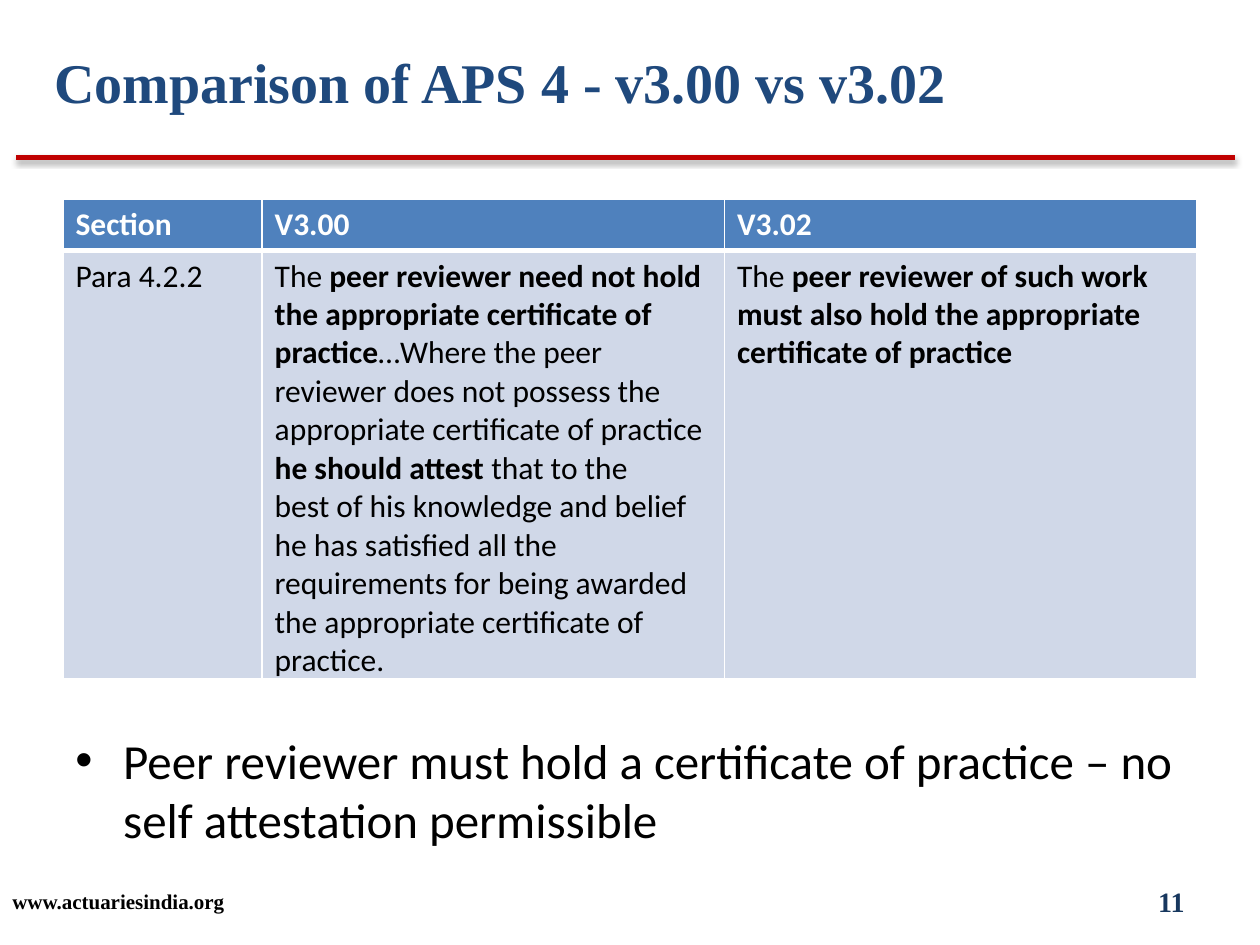
import lxml.etree
import pptx
import pptx.dml.color
import pptx.enum.shapes
import pptx.enum.text
import pptx.oxml
import pptx.oxml.ns
import pptx.util

Inches, Pt = pptx.util.Inches, pptx.util.Pt
RGBColor = pptx.dml.color.RGBColor
ANCHOR, ALIGN = pptx.enum.text.MSO_ANCHOR, pptx.enum.text.PP_ALIGN
qn = pptx.oxml.ns.qn
A_NS = 'xmlns:a="http://schemas.openxmlformats.org/drawingml/2006/main"'

RED = RGBColor(0xC0, 0x00, 0x00)
BLACK = RGBColor(0x00, 0x00, 0x00)
WHITE = RGBColor(0xFF, 0xFF, 0xFF)
TITLE_BLUE = RGBColor(0x1F, 0x49, 0x7D)
NUMBER_BLUE = RGBColor(0x17, 0x37, 0x5E)
HEADER_BLUE = RGBColor(0x4F, 0x81, 0xBD)
BODY_BLUE = RGBColor(0xD0, 0xD8, 0xE8)


def add_run(paragraph, text, name, size, color, bold):
    run = paragraph.add_run()
    run.text = text
    run.font.color.rgb = color
    for attribute, value in {"name": name, "size": Pt(size), "bold": bold}.items():
        setattr(run.font, attribute, value)


def add_box(left, top, width, height, anchor):
    box = slide.shapes.add_textbox(Inches(left), Inches(top), Inches(width), Inches(height))
    box.text_frame.word_wrap = True
    box.text_frame.vertical_anchor = anchor
    return box.text_frame.paragraphs[0]


presentation = pptx.Presentation()
presentation.slide_width, presentation.slide_height = Inches(10), Inches(7.5)
slide = presentation.slides.add_slide(presentation.slide_layouts[5])

# Red rule with a soft shadow below it
rule = slide.shapes.add_connector(
    pptx.enum.shapes.MSO_CONNECTOR.STRAIGHT,
    Inches(0.13), Inches(1.25), Inches(9.8), Inches(1.25))
rule.line.color.rgb = RED
rule.line.width = Pt(3)
rule._element.spPr.append(pptx.oxml.parse_xml(
    f'<a:effectLst {A_NS}><a:outerShdw blurRad="{Pt(3.1)}" dist="{Pt(1.6)}" dir="5400000" '
    'rotWithShape="0"><a:srgbClr val="000000"><a:alpha val="38000"/></a:srgbClr>'
    '</a:outerShdw></a:effectLst>'))

# Footer: web address and page number
address = add_box(0, 6.95, 10, 0.4, ANCHOR.MIDDLE)
add_run(address, "www.actuariesindia.org", "Times New Roman", 12, BLACK, True)
page_number = add_box(7.17, 6.95, 2.33, 0.4, ANCHOR.MIDDLE)
page_number.alignment = ALIGN.RIGHT
add_run(page_number, "11", "Times New Roman", 16, NUMBER_BLUE, True)

# Title
title = slide.shapes.title
title_place = {"left": 0.33, "top": 0.33, "width": 8, "height": 0.67}
for attribute, value in title_place.items():
    setattr(title, attribute, Inches(value))
title_format = {"vertical_anchor": ANCHOR.TOP, "word_wrap": True,
                "auto_size": pptx.enum.text.MSO_AUTO_SIZE.NONE}
for attribute, value in title_format.items():
    setattr(title.text_frame, attribute, value)
heading = title.text_frame.paragraphs[0]
heading.alignment = ALIGN.LEFT
add_run(heading, "Comparison of APS 4 - v3.00 vs v3.02", "Times New Roman", 32, TITLE_BLUE, True)

# Comparison table: cells hold paragraphs, paragraphs hold (text, bold) runs
comparison = [
    [[[("Section", True)]], [[("V3.00", True)]], [[("V3.02", True)]]],
    [
        [[("Para 4.2.2", False)]],
        [
            [("The ", False),
             ("peer reviewer need not hold the appropriate certificate of practice", True),
             ("…Where the peer reviewer does not possess the appropriate certificate "
              "of practice ", False),
             ("he should attest ", True),
             ("that to the", False)],
            [("best of his knowledge and belief he has satisfied all the requirements for "
              "being awarded the appropriate certificate of practice.", False)],
        ],
        [
            [("The ", False),
             ("peer reviewer of such work must also hold the appropriate", True)],
            [("certificate of practice", True)],
        ],
    ],
]
row_styles = [
    {"height": 0.41, "fill": HEADER_BLUE, "text": WHITE, "borders": {"L": 1, "R": 1, "T": 1, "B": 3}},
    {"height": 3.4, "fill": BODY_BLUE, "text": BLACK, "borders": {"L": 1, "R": 1, "T": 3, "B": 1}},
]
table = slide.shapes.add_table(2, 3, Inches(0.5), Inches(1.58), Inches(9), Inches(3.81)).table
for column, width in zip(table.columns, (1.58, 3.67, 3.75)):
    column.width = Inches(width)
for row, style, contents in zip(table.rows, row_styles, comparison):
    row.height = Inches(style["height"])
    for cell, paragraphs in zip(row.cells, contents):
        for side, points in style["borders"].items():
            cell._tc.get_or_add_tcPr().append(pptx.oxml.parse_xml(
                f'<a:ln{side} {A_NS} w="{Pt(points)}"><a:solidFill>'
                f'<a:srgbClr val="{WHITE}"/></a:solidFill></a:ln{side}>'))
        cell.fill.solid()
        cell.fill.fore_color.rgb = style["fill"]
        for index, runs in enumerate(paragraphs):
            frame = cell.text_frame
            paragraph = frame.add_paragraph() if index else frame.paragraphs[0]
            for text, bold in runs:
                add_run(paragraph, text, "Calibri", 18, style["text"], bold)

# Conclusion with a hanging bullet
conclusion = add_box(0.5, 5.75, 9, 1.44, ANCHOR.TOP)
bullet_format = conclusion._p.get_or_add_pPr()
bullet_format.set("marL", str(Inches(0.38)))
bullet_format.set("indent", str(Inches(-0.38)))
lxml.etree.SubElement(bullet_format, qn("a:buFont"), typeface="Arial")
lxml.etree.SubElement(bullet_format, qn("a:buChar"), char="•")
add_run(conclusion, "Peer reviewer must hold a certificate of practice – no self attestation permissible",
        "Calibri", 28, BLACK, False)

presentation.save("out.pptx")
